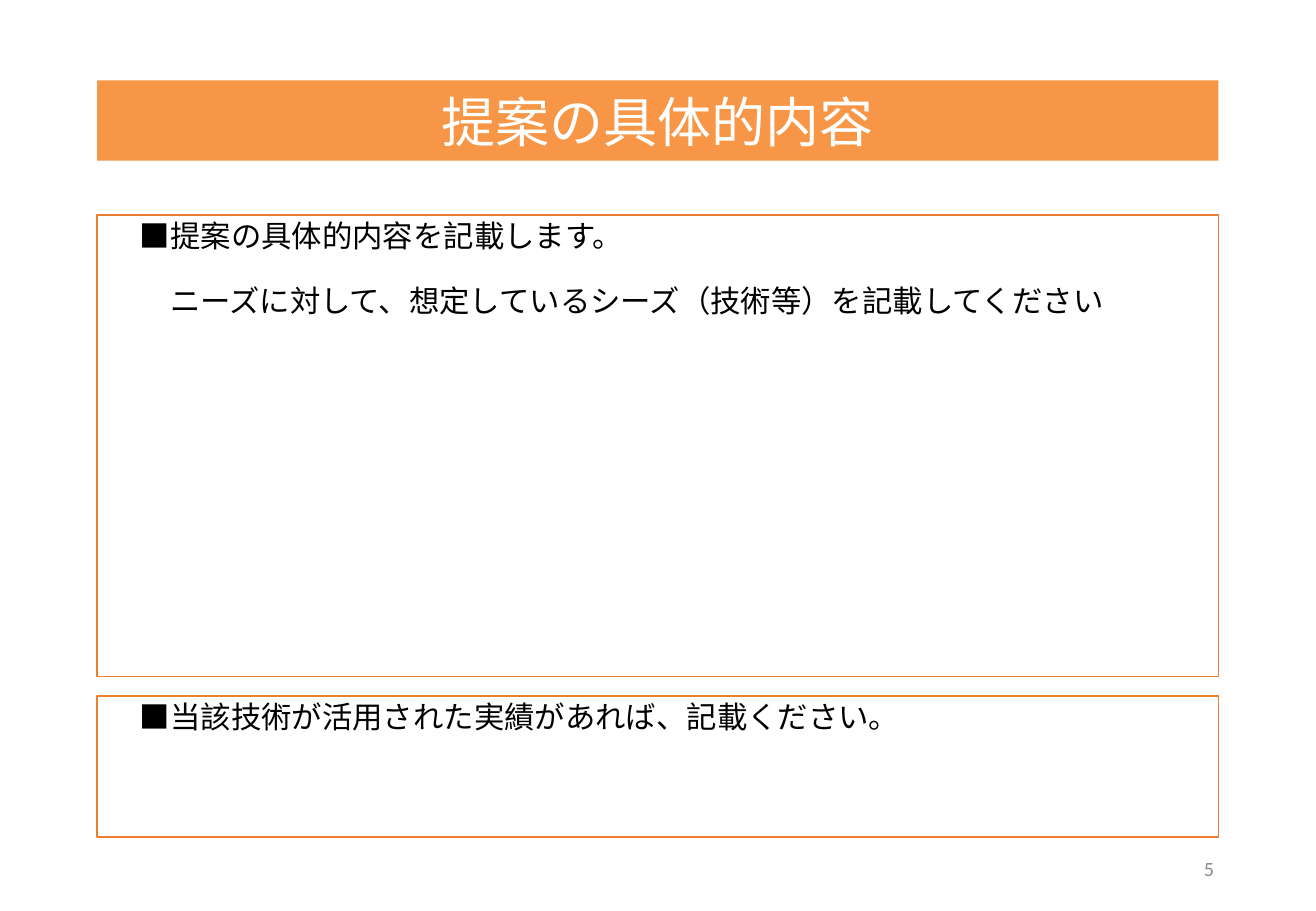
from pptx import Presentation
from pptx import util as u
from pptx.dml.color import RGBColor
from pptx.enum import text
from pptx.oxml.ns import qn
from lxml import etree

JAPANESE = "Noto Sans CJK JP"
LEFT, WIDTH = u.Cm(2.03), u.Cm(23.44)


def colour(value):
    return RGBColor.from_string(value)


def place(box, left, top, width, height):
    box.left, box.top, box.width, box.height = left, top, width, height


def add_span(para, words, size, font, shade):
    span = para.add_run()
    span.text = words
    span.font.size = u.Pt(size)
    span.font.name = font
    span.font.color.rgb = colour(shade)
    east_asian = etree.SubElement(span._r.get_or_add_rPr(), qn("a:ea"))
    east_asian.set("typeface", font)


def indent(para, margin):
    """Set the left margin and switch off the template's bullet."""
    properties = para._p.get_or_add_pPr()
    properties.set("marL", str(margin))
    properties.set("indent", "0")
    etree.SubElement(properties, qn("a:buNone"))


def fill_title(title, words):
    place(title, LEFT, u.Cm(1.68), WIDTH, u.Cm(1.68))
    title.fill.solid()
    title.fill.fore_color.rgb = colour("F79646")
    frame = title.text_frame
    frame.auto_size = text.MSO_AUTO_SIZE.NONE
    frame.vertical_anchor = text.MSO_ANCHOR.MIDDLE
    frame.margin_left = frame.margin_right = 0
    frame.margin_top = frame.margin_bottom = 0
    para = frame.paragraphs[0]
    para.alignment = text.PP_ALIGN.CENTER
    add_span(para, words, 32, JAPANESE, "FFFFFF")


def fill_body(body, top, height, heading, detail=None):
    """Frame a body placeholder and write its heading and optional detail."""
    place(body, LEFT, top, WIDTH, height)
    body.fill.solid()
    body.fill.fore_color.rgb = colour("FFFFFF")
    body.line.color.rgb = colour("ED7D31")
    body.line.width = u.Pt(1)
    frame = body.text_frame
    frame.auto_size = text.MSO_AUTO_SIZE.NONE
    frame.vertical_anchor = text.MSO_ANCHOR.TOP
    lines = [(heading, u.Cm(0.64), 0)]
    if detail:
        lines.append((detail, u.Cm(1.27), 19))
    for number, (words, margin, gap) in enumerate(lines):
        para = frame.add_paragraph() if number else frame.paragraphs[0]
        para.line_spacing = 0.9
        para.space_before = u.Pt(gap)
        indent(para, margin)
        add_span(para, words, 18, JAPANESE, "000000")


def add_page_number(page, number):
    box = page.shapes.add_textbox(u.Cm(19.43), u.Cm(17.65), u.Cm(6.2), u.Cm(1.02))
    frame = box.text_frame
    frame.word_wrap = True
    frame.vertical_anchor = text.MSO_ANCHOR.MIDDLE
    para = frame.paragraphs[0]
    para.alignment = text.PP_ALIGN.RIGHT
    add_span(para, number, 12, "Calibri", "8C8C8C")


def main():
    deck = Presentation()
    deck.slide_width, deck.slide_height = u.Cm(27.51), u.Cm(19.05)
    page = deck.slides.add_slide(deck.slide_layouts.get_by_name("Two Content"))
    title, proposal, record = page.placeholders
    fill_title(title, "提案の具体的内容")
    fill_body(proposal, u.Cm(4.5), u.Cm(9.65),
              "■提案の具体的内容を記載します。",
              "ニーズに対して、想定しているシーズ（技術等）を記載してください")
    fill_body(record, u.Cm(14.55), u.Cm(2.95),
              "■当該技術が活用された実績があれば、記載ください。")
    add_page_number(page, "5")
    deck.save("out.pptx")


if __name__ == "__main__":
    main()
